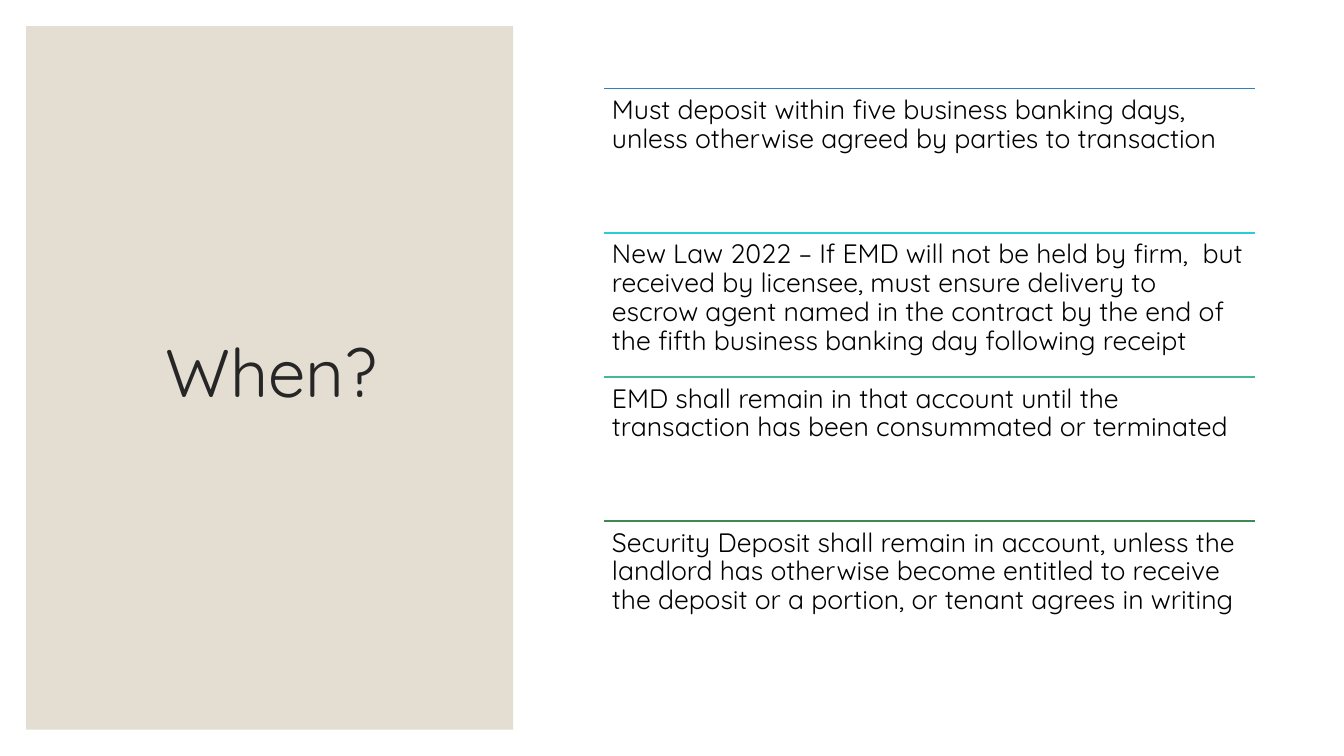
from dataclasses import dataclass

from lxml import etree
from pptx import Presentation
from pptx.dml.color import RGBColor
from pptx.enum.shapes import MSO_CONNECTOR, MSO_SHAPE
from pptx.enum.text import MSO_ANCHOR, PP_ALIGN
from pptx.oxml.ns import qn
from pptx.util import Inches, Pt

RECTANGLE = MSO_SHAPE.RECTANGLE
STRAIGHT = MSO_CONNECTOR.STRAIGHT
MIDDLE, TOP = MSO_ANCHOR.MIDDLE, MSO_ANCHOR.TOP
CENTER, LEFT = PP_ALIGN.CENTER, PP_ALIGN.LEFT

# Content: each rule with the colour of the line above it
TITLE = "When?"
DEPOSIT_RULES = [
    ("Must deposit within five business banking days, unless otherwise "
     "agreed by parties to transaction", "2683C6"),
    ("New Law 2022 – If EMD will not be held by firm,  but received by "
     "licensee, must ensure delivery to escrow agent named in the contract "
     "by the end of the fifth business banking day following receipt", "27CED7"),
    ("EMD shall remain in that account until the transaction has been "
     "consummated or terminated", "42BA97"),
    ("Security Deposit shall remain in account, unless the landlord has "
     "otherwise become entitled to receive the deposit or a portion, or "
     "tenant agrees in writing", "3E8853"),
]


@dataclass(frozen=True)
class Theme:
    font: str = "Quicksand"
    background: str = "FFFFFF"
    panel: str = "E3DED1"
    title_color: str = "262626"
    body_color: str = "000000"
    title_size: int = 48
    body_size: int = 19
    line_width: int = 1
    line_spacing: float = 0.9


THEME = Theme()

# Layout, in inches
PANEL = (0.26, 0.26, 4.83, 6.98)
TITLE_AREA = (0.63, 0.61, 4.12, 6.24)
LIST_LEFT, LIST_TOP, LIST_WIDTH, ROW_HEIGHT = 5.99, 0.88, 6.46, 1.43
ROW_INSET = 0.08


def color(value):
    return RGBColor.from_string(value)


def write(frame, text, size, text_color, align, anchor):
    frame.text = text
    frame.word_wrap = True
    frame.vertical_anchor = anchor
    para = frame.paragraphs[0]
    para.alignment = align
    para.line_spacing = THEME.line_spacing
    font = para.runs[0].font
    font.name, font.size = THEME.font, Pt(size)
    font.color.rgb = color(text_color)


def add_panel(page):
    panel = page.shapes.add_shape(RECTANGLE, *map(Inches, PANEL))
    panel.shadow.inherit = False
    panel.fill.solid()
    panel.fill.fore_color.rgb = color(THEME.panel)
    panel.line.fill.background()
    # Place the panel behind the title
    page.shapes.title._element.addprevious(panel._element)


def add_title(page):
    title = page.shapes.title
    title.left, title.top, title.width, title.height = map(Inches, TITLE_AREA)
    write(title.text_frame, TITLE, THEME.title_size, THEME.title_color,
          CENTER, MIDDLE)


def add_rule(page, index, text, line_color):
    left, width = Inches(LIST_LEFT), Inches(LIST_WIDTH)
    top = Inches(LIST_TOP + index * ROW_HEIGHT)

    divider = page.shapes.add_connector(STRAIGHT, left, top, left + width, top)
    divider.line.color.rgb = color(line_color)
    divider.line.width = Pt(THEME.line_width)
    etree.SubElement(divider._element.spPr, qn("a:effectLst"))

    box = page.shapes.add_textbox(left, top, width, Inches(ROW_HEIGHT))
    frame = box.text_frame
    frame.margin_left = frame.margin_right = Inches(ROW_INSET)
    frame.margin_top = frame.margin_bottom = Inches(ROW_INSET)
    write(frame, text, THEME.body_size, THEME.body_color, LEFT, TOP)


def main():
    deck = Presentation()
    deck.slide_width, deck.slide_height = Inches(13.33), Inches(7.5)
    title_only = deck.slide_layouts[5]
    page = deck.slides.add_slide(title_only)
    page.background.fill.solid()
    page.background.fill.fore_color.rgb = color(THEME.background)

    add_panel(page)
    add_title(page)
    for index, (text, line_color) in enumerate(DEPOSIT_RULES):
        add_rule(page, index, text, line_color)

    deck.save("out.pptx")


if __name__ == "__main__":
    main()
